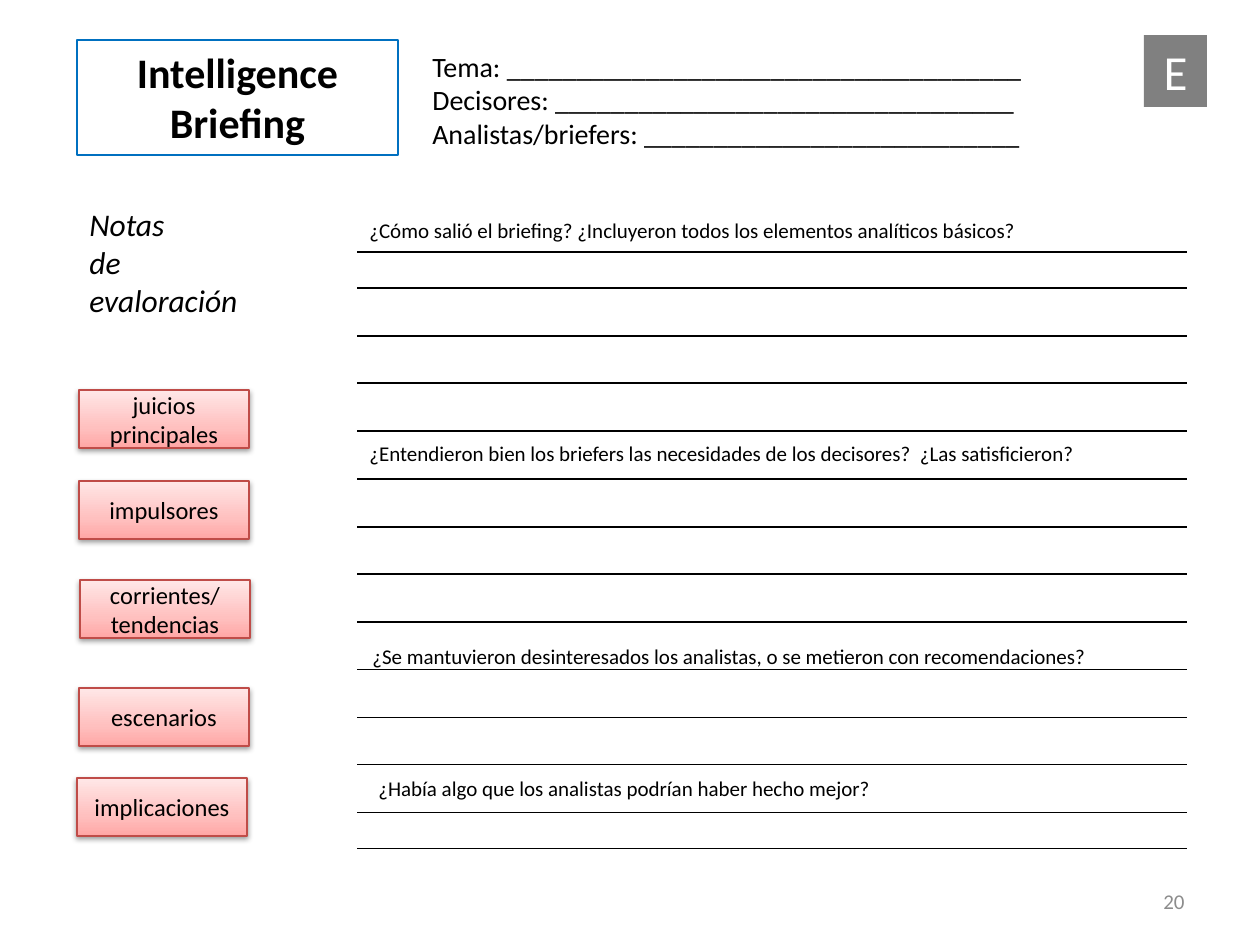
import pptx
import pptx.dml.color
import pptx.enum.shapes
import pptx.enum.text
import pptx.oxml
import pptx.oxml.ns
import pptx.util
from dataclasses import dataclass
from typing import Any

SCALE = 914400 / 126
FONT = "Calibri"
ALIGN = pptx.enum.text.PP_ALIGN
ANCHOR = pptx.enum.text.MSO_ANCHOR
RECT = pptx.enum.shapes.MSO_SHAPE.RECTANGLE
SPACE = pptx.oxml.ns.nsdecls("a")
STOPS = ((0, "FFA6A5"), (35, "FFC0BF"), (100, "FFE7E7"))


@dataclass
class Box:
    x: int
    y: int
    w: int
    h: int


@dataclass
class Style:
    size: int
    color: str = "000000"
    bold: bool = False
    slant: bool = False
    align: Any = ALIGN.LEFT
    anchor: Any = ANCHOR.TOP


@dataclass
class Label:
    text: str
    x: int
    y: int


TOPICS = [
    Label("escenarios", 79, 688),
    Label("implicaciones", 77, 778),
    Label("juicios principales", 79, 390),
    Label("corrientes/ tendencias", 80, 580),
    Label("impulsores", 79, 481),
]
ASKS = [
    Label("¿Cómo salió el briefing? ¿Incluyeron todos los elementos analíticos básicos?", 357, 211),
    Label("¿Entendieron bien los briefers las necesidades de los decisores?  ¿Las satisficieron?", 357, 434),
    Label("¿Se mantuvieron desinteresados los analistas, o se metieron con recomendaciones?", 360, 637),
    Label("¿Había algo que los analistas podrían haber hecho mejor?", 366, 769),
]


def px(count: int) -> int:
    return round(count * SCALE)


def place(box: Box) -> tuple[int, ...]:
    return tuple(px(side) for side in (box.x, box.y, box.w, box.h))


def tint(code: str) -> Any:
    return pptx.dml.color.RGBColor.from_string(code)


def write(shape: Any, text: str, style: Style) -> None:
    frame = shape.text_frame
    frame.word_wrap = True
    frame.vertical_anchor = style.anchor
    frame.text = text
    for para in frame.paragraphs:
        para.alignment = style.align
        font = para.font
        font.name = FONT
        font.size = pptx.util.Pt(style.size)
        font.bold = style.bold
        font.italic = style.slant
        font.color.rgb = tint(style.color)


def add_text(slide: Any, box: Box, text: str, style: Style) -> None:
    write(slide.shapes.add_textbox(*place(box)), text, style)


def add_rect(slide: Any, box: Box, text: str, style: Style, fill: str = "", line: str = "") -> Any:
    shape = slide.shapes.add_shape(RECT, *place(box))
    shape.shadow.inherit = False
    if fill:
        shape.fill.solid()
        shape.fill.fore_color.rgb = tint(fill)
    else:
        shape.fill.background()
    if line:
        shape.line.color.rgb = tint(line)
        shape.line.width = pptx.util.Pt(0.75)
    else:
        shape.line.fill.background()
    write(shape, text, style)
    return shape


def add_topic(slide: Any, topic: Label, style: Style) -> None:
    box = Box(topic.x, topic.y, 170, 58)
    shape = add_rect(slide, box, topic.text, style, line="BF4C48")
    props = shape._element.spPr
    stops = "".join(
        f'<a:gs pos="{spot * 1000}"><a:srgbClr val="{code}"/></a:gs>' for spot, code in STOPS
    )
    blend = pptx.oxml.parse_xml(
        f'<a:gradFill {SPACE} rotWithShape="1"><a:gsLst>{stops}</a:gsLst>'
        '<a:lin ang="16200000" scaled="0"/></a:gradFill>'
    )
    props.replace(props.find(pptx.oxml.ns.qn("a:noFill")), blend)
    shade = pptx.oxml.parse_xml(
        f'<a:outerShdw {SPACE} blurRad="40000" dist="20000" dir="5400000" rotWithShape="0">'
        '<a:srgbClr val="000000"><a:alpha val="38000"/></a:srgbClr></a:outerShdw>'
    )
    props.find(pptx.oxml.ns.qn("a:effectLst")).append(shade)


def rule_cell(cell: Any) -> None:
    cell.fill.background()
    cell.margin_top = cell.margin_bottom = 0
    cell.text_frame.paragraphs[0].font.size = pptx.util.Pt(12)
    ink = '<a:solidFill><a:srgbClr val="000000"/></a:solidFill>'
    edges = (("L", "<a:noFill/>"), ("R", "<a:noFill/>"), ("T", ink), ("B", ink))
    for spot, (side, paint) in enumerate(edges):
        edge = pptx.oxml.parse_xml(f'<a:ln{side} {SPACE} w="12700">{paint}</a:ln{side}>')
        cell._tc.get_or_add_tcPr().insert(spot, edge)


def add_lines(slide: Any, box: Box, edge: int, count: int) -> None:
    table = slide.shapes.add_table(count + 2, 1, *place(box)).table
    inner = box.h - 2 * edge
    marks = [round(step * inner / count) for step in range(count + 1)]
    gaps = [low - top for top, low in zip(marks, marks[1:])]
    for row, high in zip(table.rows, [edge, *gaps, edge]):
        row.height = px(high)
        rule_cell(row.cells[0])


def main() -> None:
    deck = pptx.Presentation()
    deck.slide_width, deck.slide_height = px(1260), px(945)
    slide = deck.slides.add_slide(deck.slide_layouts[6])

    title = Style(24, bold=True, align=ALIGN.CENTER)
    add_rect(slide, Box(77, 40, 321, 115), "Intelligence Briefing", title, line="0070C0")
    add_text(slide, Box(77, 199, 207, 150), "Notas\nde\nevaloración", Style(18, slant=True))
    add_lines(slide, Box(357, 252, 830, 597), 36, 11)

    fields = (("Tema", 37), ("Decisores", 33), ("Analistas/briefers", 27))
    blanks = "\n".join(f"{name}: {'_' * count}" for name, count in fields)
    add_text(slide, Box(420, 43, 643, 115), blanks, Style(16))
    badge = Style(28, "FFFFFF", align=ALIGN.CENTER)
    add_rect(slide, Box(1144, 35, 63, 72), "E", badge, fill="808080")
    page = Style(12, "8C8C8C", align=ALIGN.RIGHT, anchor=ANCHOR.MIDDLE)
    add_text(slide, Box(903, 876, 294, 50), "20", page)

    middle = Style(14, align=ALIGN.CENTER, anchor=ANCHOR.MIDDLE)
    for topic in TOPICS:
        add_topic(slide, topic, middle)
    for ask in ASKS:
        add_text(slide, Box(ask.x, ask.y, 743, 38), ask.text, Style(12))
    deck.save("out.pptx")


if __name__ == "__main__":
    main()
